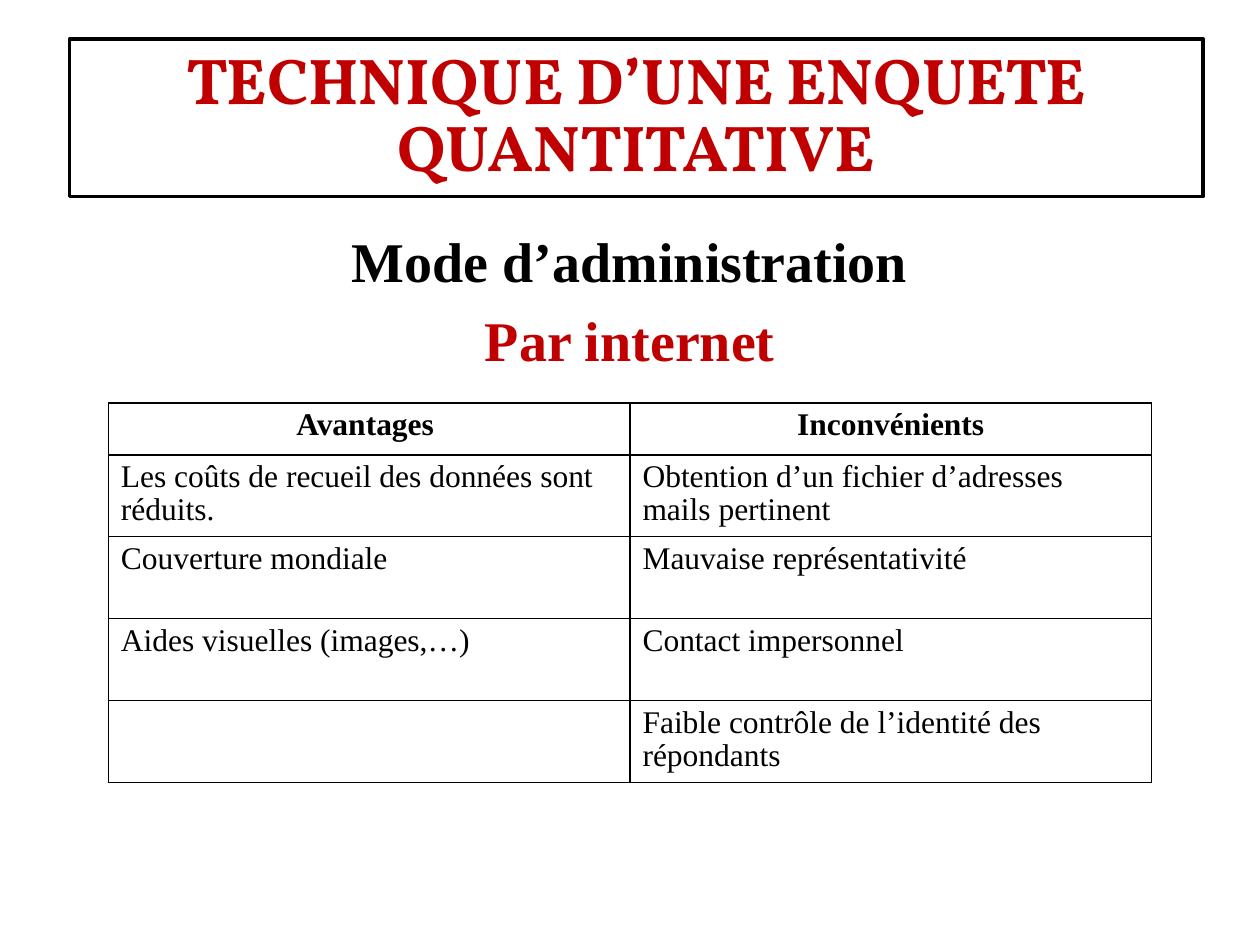
from dataclasses import dataclass

import pptx
import pptx.dml.color
import pptx.enum.text
import pptx.oxml
import pptx.oxml.ns
import pptx.util
from pptx.util import Inches

PP_ALIGN = pptx.enum.text.PP_ALIGN
MSO_ANCHOR = pptx.enum.text.MSO_ANCHOR


@dataclass(frozen=True)
class Theme:
    black: str = "000000"
    white: str = "FFFFFF"
    red: str = "C00000"
    title_font: str = "Vollkorn"
    text_font: str = "Times New Roman"
    title_size: int = 37
    heading_size: int = 32
    cell_size: int = 18


def rgb(value):
    return pptx.dml.color.RGBColor.from_string(value)


class SlideBuilder:
    def __init__(self, prs, theme):
        self.theme = theme
        self.s = prs.slides.add_slide(prs.slide_layouts[1])

    def place(self, sp, left, top, width, height):
        sp.left, sp.top = Inches(left), Inches(top)
        sp.width, sp.height = Inches(width), Inches(height)

    def style(self, p, name, size, color, bold=True, align=PP_ALIGN.CENTER):
        p.alignment = align
        p.font.name = name
        p.font.size = pptx.util.Pt(size)
        p.font.bold = bold
        p.font.color.rgb = rgb(color)

    def title(self, text, *box):
        t = self.theme
        sp = self.s.shapes.title
        self.place(sp, *box)
        sp.fill.solid()
        sp.fill.fore_color.rgb = rgb(t.white)
        sp.line.color.rgb = rgb(t.black)
        sp.line.width = pptx.util.Pt(2)
        tf = sp.text_frame
        tf.text = text
        tf.auto_size = pptx.enum.text.MSO_AUTO_SIZE.NONE
        tf.vertical_anchor = MSO_ANCHOR.MIDDLE
        p = tf.paragraphs[0]
        p.line_spacing = 0.86
        self.style(p, t.title_font, t.title_size, t.red)

    def body(self, lines, *box):
        t = self.theme
        sp = self.s.placeholders[1]
        self.place(sp, *box)
        tf = sp.text_frame
        tf.text = "\n".join(text for text, _ in lines)
        for p, (_, color) in zip(tf.paragraphs, lines):
            self.style(p, t.text_font, t.heading_size, color)
            pPr = p._p.get_or_add_pPr()
            pPr.insert(0, pptx.oxml.parse_xml(
                f'<a:buNone {pptx.oxml.ns.nsdecls("a")}/>'))

    def borders(self, cell):
        tcPr = cell._tc.get_or_add_tcPr()
        for i, side in enumerate(("lnL", "lnR", "lnT", "lnB")):
            tcPr.insert(i, pptx.oxml.parse_xml(
                f'<a:{side} {pptx.oxml.ns.nsdecls("a")} w="12700">'
                f'<a:solidFill><a:srgbClr val="{self.theme.black}"/></a:solidFill>'
                f'</a:{side}>'))

    def table(self, rows, left, top, width, heights):
        t = self.theme
        frame = self.s.shapes.add_table(
            len(rows), len(rows[0]), Inches(left), Inches(top),
            Inches(width), Inches(sum(heights)))
        table = frame.table
        table.first_row = table.horz_banding = False
        for i, (row, height) in enumerate(zip(rows, heights)):
            table.rows[i].height = Inches(height)
            header = i == 0
            for j, text in enumerate(row):
                cell = table.cell(i, j)
                cell.text = text
                cell.fill.background()
                self.borders(cell)
                p = cell.text_frame.paragraphs[0]
                p.line_spacing = 0.95
                self.style(p, t.text_font, t.cell_size, t.black, header,
                           PP_ALIGN.CENTER if header else PP_ALIGN.LEFT)


def main():
    prs = pptx.Presentation()
    prs.slide_width, prs.slide_height = Inches(10), Inches(7.5)
    theme = Theme()
    slide = SlideBuilder(prs, theme)
    slide.title("TECHNIQUE D’UNE ENQUETE QUANTITATIVE", 0.55, 0.31, 9, 1.25)
    slide.body([("Mode d’administration", theme.black),
                ("Par internet", theme.red)], 0.5, 1.75, 9, 4.95)
    rows = [
        ("Avantages ", "Inconvénients"),
        ("Les coûts de recueil des données sont réduits.",
         "Obtention d’un fichier d’adresses mails pertinent"),
        ("Couverture mondiale", "Mauvaise représentativité"),
        ("Aides visuelles (images,…)", "Contact impersonnel"),
        ("", "Faible contrôle de l’identité des répondants"),
    ]
    slide.table(rows, 0.86, 3.2, 8.28, [0.41] + [0.65] * (len(rows) - 1))
    prs.save("out.pptx")


if __name__ == "__main__":
    main()
